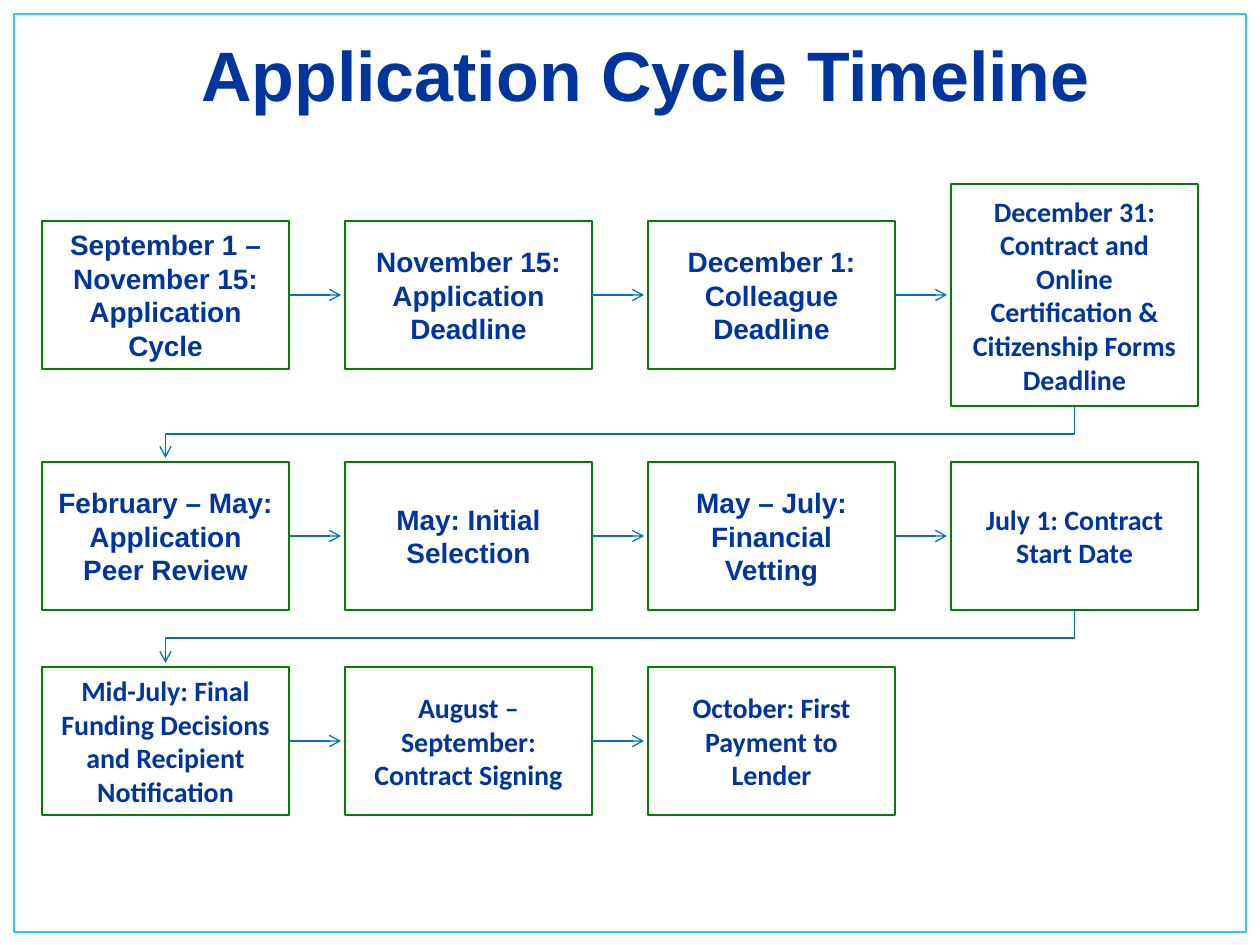
import pptx
import pptx.dml.color
import pptx.enum.shapes
import pptx.enum.text
import pptx.oxml.ns
import pptx.util
from lxml import etree

COLORS = {
    "navy": "00359E",
    "green": "008000",
    "blue": "0070C0",
    "cyan": "21D6E0",
    "white": "FFFFFF",
}
SCALE = 914400 / 126
LEFT, STEP, WIDTH, HEIGHT = 42, 303, 247, 148
GAP, TURN = 4, 28
ROW_CENTERS = [295, 536, 741]
STAGES = [
    [
        ("September 1 – November 15: Application Cycle", "Arial", HEIGHT),
        ("November 15: Application Deadline", "Arial", HEIGHT),
        ("December 1: Colleague Deadline", "Arial", HEIGHT),
        ("December 31: Contract and Online Certification & Citizenship Forms Deadline",
         "Calibri", 222),
    ],
    [
        ("February – May: Application Peer Review", "Arial", HEIGHT),
        ("May: Initial Selection", "Arial", HEIGHT),
        ("May – July: Financial Vetting", "Arial", HEIGHT),
        ("July 1: Contract Start Date", "Calibri", HEIGHT),
    ],
    [
        ("Mid-July: Final Funding Decisions and Recipient Notification", "Calibri", HEIGHT),
        ("August – September: Contract Signing", "Calibri", HEIGHT),
        ("October: First Payment to Lender", "Calibri", HEIGHT),
    ],
]


def px(length):
    return pptx.util.Emu(round(length * SCALE))


def color(name):
    return pptx.dml.color.RGBColor.from_string(COLORS[name])


class TimelinePage:
    def __init__(self, deck):
        self.page = deck.slides.add_slide(deck.slide_layouts[6])
        self.shapes = self.page.shapes

    def label(self, box, text, font, size, insets):
        frame = box.text_frame
        frame.word_wrap = True
        frame.vertical_anchor = pptx.enum.text.MSO_ANCHOR.MIDDLE
        (frame.margin_left, frame.margin_top,
         frame.margin_right, frame.margin_bottom) = map(px, insets)
        para = frame.paragraphs[0]
        para.alignment = pptx.enum.text.PP_ALIGN.CENTER
        span = para.add_run()
        span.text = text
        span.font.name = font
        span.font.size = pptx.util.Pt(size)
        span.font.bold = True
        span.font.color.rgb = color("navy")

    def rectangle(self, left, top, width, height, line, fill=None):
        box = self.shapes.add_shape(
            pptx.enum.shapes.MSO_SHAPE.RECTANGLE, px(left), px(top), px(width), px(height))
        box.shadow.inherit = False
        if fill:
            box.fill.solid()
            box.fill.fore_color.rgb = color(fill)
        else:
            box.fill.background()
        box.line.color.rgb = color(line)
        box.line.width = pptx.util.Pt(1.5)
        return box

    def title(self, text):
        box = self.shapes.add_textbox(px(21), px(0), px(1218), px(147))
        self.label(box, text, "Arial", 40, (44, 6, 13, 6))

    def stage(self, column, center, text, font, height):
        box = self.rectangle(LEFT + column * STEP, center - height // 2,
                             WIDTH, height, "green", "white")
        self.label(box, text, font, 16, (15, 15, 15, 15))
        return box

    def arrow_line(self, shape):
        shape.line.color.rgb = color("blue")
        shape.line.width = pptx.util.Pt(0.75)
        outline = shape._element.spPr.get_or_add_ln()
        etree.SubElement(outline, pptx.oxml.ns.qn("a:tailEnd"), type="arrow")

    def arrow(self, source, target):
        middle = source.top + source.height // 2
        connector = self.shapes.add_connector(
            pptx.enum.shapes.MSO_CONNECTOR.STRAIGHT,
            source.left + source.width, middle, target.left - px(GAP), middle)
        connector.begin_connect(source, 3)
        self.arrow_line(connector)
        etree.SubElement(connector._element.spPr, pptx.oxml.ns.qn("a:effectLst"))

    def row_return(self, source, target):
        start = source.left + source.width // 2
        finish = target.left + target.width // 2
        bottom = source.top + source.height
        turn = bottom + px(TURN)
        builder = self.shapes.build_freeform(start, bottom)
        builder.add_line_segments(
            [(start, turn), (finish, turn), (finish, target.top - px(GAP))], close=False)
        route = builder.convert_to_shape()
        route.shadow.inherit = False
        route.fill.background()
        self.arrow_line(route)


def main():
    deck = pptx.Presentation()
    deck.slide_width, deck.slide_height = px(1260), px(945)
    timeline = TimelinePage(deck)
    timeline.rectangle(14, 14, 1232, 918, "cyan")
    timeline.title("Application Cycle Timeline")
    rows = [
        [timeline.stage(column, center, *stage) for column, stage in enumerate(stages)]
        for center, stages in zip(ROW_CENTERS, STAGES)
    ]
    for row in rows:
        for source, target in zip(row, row[1:]):
            timeline.arrow(source, target)
    for row, following in zip(rows, rows[1:]):
        timeline.row_return(row[-1], following[0])
    deck.save("out.pptx")


if __name__ == "__main__":
    main()
